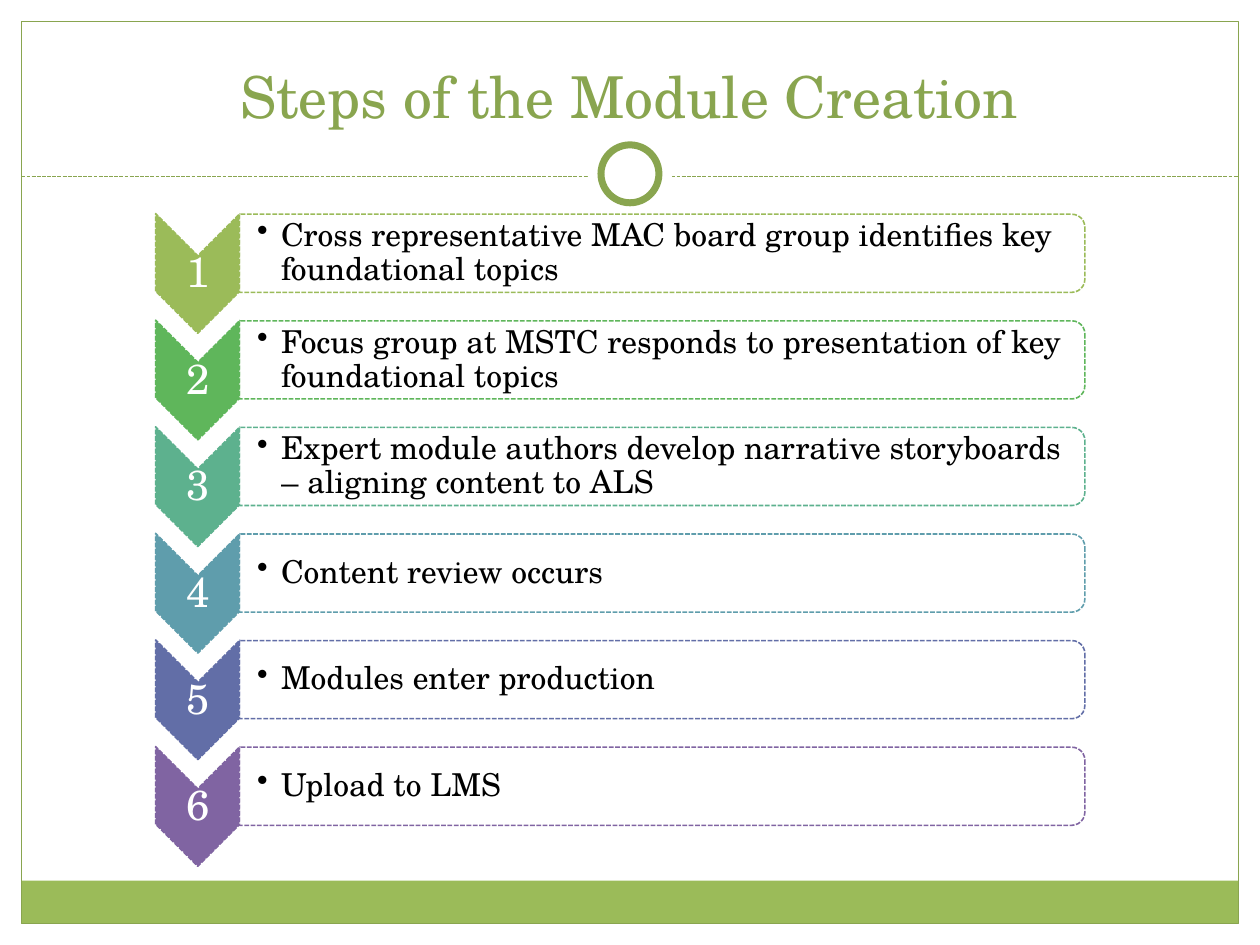
from lxml import etree
from pptx import Presentation
from pptx import util as u
from pptx.dml.color import RGBColor
from pptx.enum import dml, shapes, text
from pptx.oxml.ns import qn

TITLE = "Steps of the Module Creation"
STEPS = [
    ("Cross representative MAC board group identifies key foundational topics", "9BBB59"),
    ("Focus group at MSTC responds to presentation of key foundational topics", "5FB65B"),
    ("Expert module authors develop narrative storyboards – aligning content to ALS", "5DB18E"),
    ("Content review occurs", "5F9DAC"),
    ("Modules enter production", "626EA7"),
    ("Upload to LMS", "8064A2"),
]
FONT, GREEN, BAND, WHITE = "TeX Gyre Schola", "89A54F", "9BBB59", "FFFFFF"
W, H = 10, 7.5
MARGIN, RULE_Y, RING_Y = 0.17, 1.4, 1.38
PITCH = 0.846                          # distance between steps
BAR_LEFT, BAR_W, BAR_H, BAR_Y = 1.9, 6.71, 0.62, 2.01
ARROW_X, ARROW_Y, ARROW_W, ARROW_H = 1.57, 2.17, 0.67, 0.95

prs = Presentation()
prs.slide_width, prs.slide_height = u.Inches(W), u.Inches(H)
slide = prs.slides.add_slide(prs.slide_layouts[6])
KINDS = shapes.MSO_SHAPE


def color(value):
    return RGBColor.from_string(value)


def style_line(line, value, width, dashed=False):
    line.color.rgb = color(value)
    line.width = u.Pt(width)
    if dashed:
        line.dash_style = dml.MSO_LINE.SQUARE_DOT


def add_centered(kind, cx, cy, w, h, fill=None, line=None, width=0.75, dashed=False, turn=0):
    shape = slide.shapes.add_shape(kind, *map(u.Inches, (cx - w / 2, cy - h / 2, w, h)))
    shape.shadow.inherit = False
    shape.rotation = turn
    if fill:
        shape.fill.solid()
        shape.fill.fore_color.rgb = color(fill)
    else:
        shape.fill.background()
    if line:
        style_line(shape.line, line, width, dashed)
    else:
        shape.line.fill.background()
    return shape


def add_text(words, x, y, w, h, size, value, insets, anchor, align, spacing=1.0):
    frame = slide.shapes.add_textbox(*map(u.Inches, (x, y, w, h))).text_frame
    frame.word_wrap = True
    frame.vertical_anchor = anchor
    (frame.margin_left, frame.margin_top,
     frame.margin_right, frame.margin_bottom) = map(u.Inches, insets)
    para = frame.paragraphs[0]
    para.alignment, para.line_spacing = align, spacing
    run = para.add_run()
    run.text = words
    run.font.name, run.font.size = FONT, u.Pt(size)
    run.font.color.rgb = color(value)
    return para


def add_bullet(para, indent):
    props = para._p.get_or_add_pPr()
    props.set("marL", str(u.Inches(indent)))
    props.set("indent", str(-u.Inches(indent)))
    etree.SubElement(props, qn("a:buChar")).set("char", "•")


# Frame, bottom band and dashed rule
add_centered(KINDS.RECTANGLE, W / 2, 7.16, W - 2 * MARGIN, 0.34, fill=BAND)
add_centered(KINDS.RECTANGLE, W / 2, H / 2, W - 2 * MARGIN, H - 2 * MARGIN, line=GREEN)
rule = slide.shapes.add_connector(
    shapes.MSO_CONNECTOR.STRAIGHT,
    *map(u.Inches, (MARGIN, RULE_Y, W - MARGIN, RULE_Y)))
style_line(rule.line, GREEN, 0.75, dashed=True)
etree.SubElement(rule._element.spPr, qn("a:effectLst"))

# Ring on the rule
add_centered(KINDS.OVAL, W / 2, RING_Y, 0.67, 0.67, fill=WHITE)
add_centered(KINDS.OVAL, W / 2, RING_Y, 0.46, 0.46, fill=WHITE, line=GREEN, width=4)

# Title
add_text(TITLE, 0.33, 0.25, 9.33, 0.83, 33, GREEN, (0.1, 0.05, 0.1, 0.05),
         text.MSO_ANCHOR.BOTTOM, text.PP_ALIGN.CENTER)

# Steps: numbered chevron and outlined bar, both turned a quarter
for i, (words, hue) in enumerate(STEPS):
    arrow_y, bar_y = ARROW_Y + i * PITCH, BAR_Y + i * PITCH
    add_centered(KINDS.CHEVRON, ARROW_X, arrow_y, ARROW_H, ARROW_W,
                 fill=hue, line=hue, width=0.9, dashed=True, turn=90)
    add_text(str(i + 1), ARROW_X - ARROW_W / 2, arrow_y - 0.14, ARROW_W, 0.29, 24, WHITE,
             (0.02,) * 4, text.MSO_ANCHOR.MIDDLE, text.PP_ALIGN.CENTER, 0.9)
    bar = add_centered(KINDS.ROUND_2_SAME_RECTANGLE, BAR_LEFT + BAR_W / 2, bar_y, BAR_H, BAR_W,
                       fill=WHITE, line=hue, width=0.9, dashed=True, turn=90)
    tint = bar._element.spPr.find(qn("a:solidFill"))[0]
    etree.SubElement(tint, qn("a:alpha")).set("val", "90000")
    para = add_text(words, BAR_LEFT, bar_y - 0.28, 6.68, 0.56, 18, "000000",
                    (0.14, 0.01, 0.01, 0.01), text.MSO_ANCHOR.MIDDLE, text.PP_ALIGN.LEFT, 0.9)
    add_bullet(para, 0.19)

prs.save("out.pptx")
